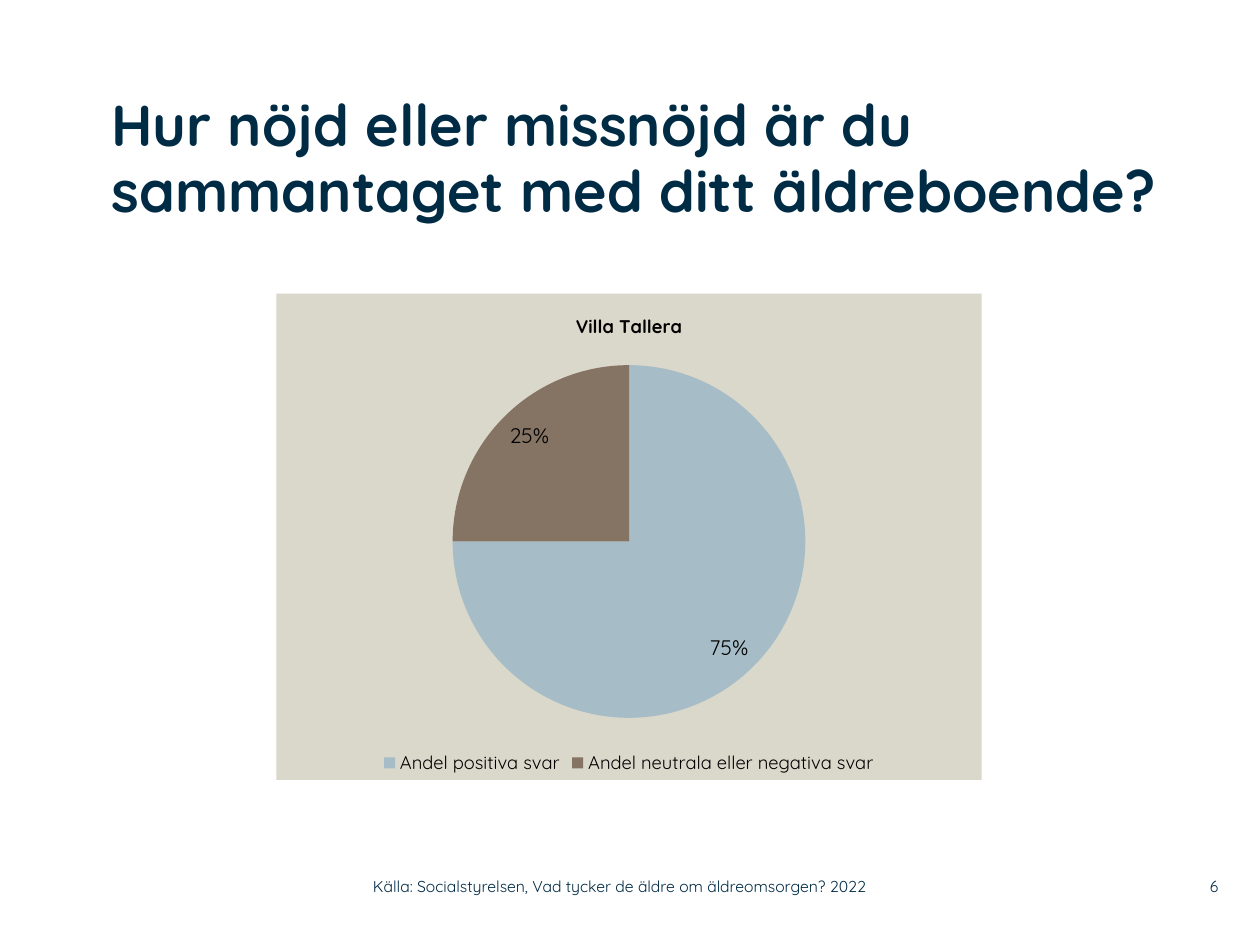
from lxml import etree
from pptx import Presentation
from pptx.chart.data import CategoryChartData
from pptx.dml.color import RGBColor
from pptx.enum.chart import XL_CHART_TYPE as ChartType
from pptx.enum.chart import XL_LABEL_POSITION as LabelPos
from pptx.enum.chart import XL_LEGEND_POSITION as LegendPos
from pptx.enum.text import MSO_ANCHOR as Anchor, PP_ALIGN as Align
from pptx.oxml import parse_xml
from pptx.oxml.ns import nsdecls, qn
from pptx.util import Cm, Pt

NAVY, BLACK = "002B45", "000000"
SAND, BLUE, BROWN = "DAD7CB", "A6BCC6", "857363"


def color(hex_code):
    return RGBColor.from_string(hex_code)


class SlideBuilder:
    font_name = "Quicksand"

    def __init__(self, prs):
        self.slide = prs.slides.add_slide(prs.slide_layouts[6])

    def style(self, font, size, hex_code, bold=False):
        font.name = self.font_name
        font.size = Pt(size)
        font.bold = bold
        font.color.rgb = color(hex_code)

    def text(self, words, box, size, bold=False, align=Align.LEFT,
             anchor=Anchor.MIDDLE, spacing=None):
        frame = self.slide.shapes.add_textbox(*map(Cm, box)).text_frame
        frame.word_wrap = True
        frame.vertical_anchor = anchor
        frame.margin_left = frame.margin_right = 0
        frame.margin_top = frame.margin_bottom = 0
        frame.text = words
        paragraph = frame.paragraphs[0]
        paragraph.alignment = align
        paragraph.line_spacing = spacing
        self.style(paragraph.runs[0].font, size, NAVY, bold)

    def pie(self, title, shares, box, slice_colors, plot_layout):
        data = CategoryChartData(number_format="0")
        data.categories = list(shares)
        data.add_series("Series 1", list(shares.values()))
        chart = self.slide.shapes.add_chart(
            ChartType.PIE, *map(Cm, box), data).chart
        self.style(chart.font, 18, BLACK)

        # Title and legend
        chart.has_title = True
        chart.chart_title.text_frame.text = title
        heading = chart.chart_title.text_frame.paragraphs[0].runs[0]
        self.style(heading.font, 10.5, BLACK, bold=True)
        chart.chart_title.include_in_layout = False
        chart.has_legend = True
        chart.legend.position = LegendPos.BOTTOM
        chart.legend.include_in_layout = False
        self.style(chart.legend.font, 10.5, BLACK)

        # Slices and their percentages
        plot = chart.plots[0]
        plot.vary_by_categories = True
        for index, slice_color in enumerate(slice_colors):
            fill = plot.series[0].points[index].format.fill
            fill.solid()
            fill.fore_color.rgb = color(slice_color)
        plot.has_data_labels = True
        labels = plot.data_labels
        labels.show_percentage = True
        labels.show_value = False
        labels.number_format = "0%"
        labels.number_format_is_linked = False
        labels.position = LabelPos.INSIDE_END
        self.style(labels.font, 12, BLACK)

        self.place_plot(chart, plot_layout)
        self.fill_background(chart, SAND)

    def place_plot(self, chart, fractions):
        plot_area = chart.element.find(".//" + qn("c:plotArea"))
        for old in plot_area.findall(qn("c:layout")):
            plot_area.remove(old)
        layout = parse_xml(f"<c:layout {nsdecls('c')}><c:manualLayout/></c:layout>")
        settings = {"layoutTarget": "inner", "xMode": "edge", "yMode": "edge",
                    **dict(zip("xywh", fractions))}
        for tag, value in settings.items():
            etree.SubElement(layout[0], qn("c:" + tag)).set("val", str(value))
        plot_area.insert(0, layout)

    def fill_background(self, chart, hex_code):
        chart.element.find(qn("c:chart")).addnext(parse_xml(
            f"<c:spPr {nsdecls('c', 'a')}><a:solidFill>"
            f'<a:srgbClr val="{hex_code}"/></a:solidFill>'
            "<a:ln><a:noFill/></a:ln></c:spPr>"))


def main():
    prs = Presentation()
    prs.slide_width, prs.slide_height = Cm(25.4), Cm(19.05)
    page = SlideBuilder(prs)

    # Question
    page.text("Hur nöjd eller missnöjd är du sammantaget med ditt äldreboende?",
              (2.24, 1.9, 22.43, 3.6), 33, bold=True, anchor=Anchor.TOP,
              spacing=0.95)

    # Share of answers
    page.pie("Villa Tallera",
             {"Andel positiva svar": 75, "Andel neutrala eller negativa svar": 25},
             (5.57, 5.92, 14.22, 9.8), (BLUE, BROWN), (0.25, 0.14, 0.5, 0.74))

    # Source and page number
    footer_top, footer_height = 17.5, 0.74
    page.text("Källa: Socialstyrelsen, Vad tycker de äldre om äldreomsorgen? 2022",
              (7.52, footer_top, 11.25, footer_height), 9)
    page.text("6", (23.37, footer_top, 1.19, footer_height), 9, align=Align.RIGHT)

    prs.save("out.pptx")


if __name__ == "__main__":
    main()
